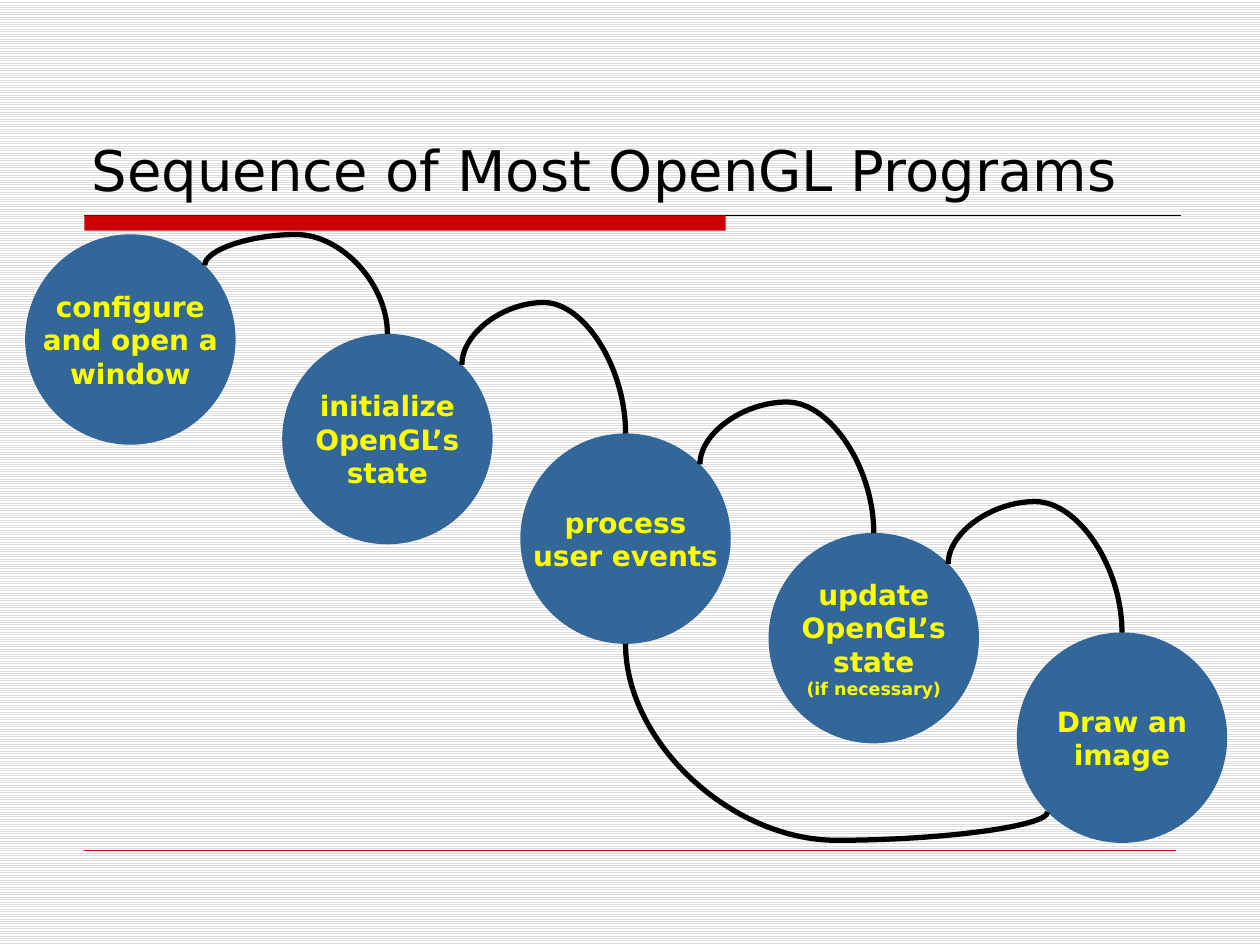
from dataclasses import dataclass
from math import sqrt

from lxml import etree
from pptx import Presentation
from pptx.dml.color import RGBColor
from pptx.enum.dml import MSO_PATTERN
from pptx.enum.shapes import MSO_CONNECTOR, MSO_SHAPE
from pptx.enum.text import MSO_ANCHOR, PP_ALIGN
from pptx.oxml.ns import qn
from pptx.util import Inches, Pt

STRIPES = MSO_PATTERN.LIGHT_HORIZONTAL
STRAIGHT, CURVE = MSO_CONNECTOR.STRAIGHT, MSO_CONNECTOR.CURVE
RECTANGLE, OVAL = MSO_SHAPE.RECTANGLE, MSO_SHAPE.OVAL
MIDDLE, BOTTOM = MSO_ANCHOR.MIDDLE, MSO_ANCHOR.BOTTOM
CENTER = PP_ALIGN.CENTER

BLACK = RGBColor(0x00, 0x00, 0x00)
WHITE = RGBColor(0xFF, 0xFF, 0xFF)
GRAY = RGBColor(0xDD, 0xDD, 0xDD)
RED = RGBColor(0xCC, 0x00, 0x00)
BLUE = RGBColor(0x33, 0x66, 0x99)
YELLOW = RGBColor(0xFF, 0xFF, 0x00)

FONT = "DejaVu Sans"
DIAMETER = 1.67
RADIUS = DIAMETER / 2
DIAGONAL = RADIUS / sqrt(2)
FIRST_TOP = 1.86
STEP_DOWN = 0.79
ARC_RISE = 0.25


@dataclass(frozen=True)
class Point:
    x: float
    y: float


@dataclass(frozen=True)
class Stage:
    left: float
    top: float
    lines: tuple[str, ...]
    note: str = ""

    def at(self, dx: float, dy: float) -> Point:
        return Point(self.left + RADIUS + dx, self.top + RADIUS + dy)


@dataclass(frozen=True)
class Arc:
    start: Point
    end: Point
    turn_y: float


def style_line(connector, color: RGBColor, width: float) -> None:
    connector.line.color.rgb = color
    connector.line.width = Pt(width)
    etree.SubElement(connector._element.spPr, qn("a:effectLst"))


def draw_rule(slide, left: float, right: float, y: float, color: RGBColor, width: float) -> None:
    rule = slide.shapes.add_connector(
        STRAIGHT, Inches(left), Inches(y), Inches(right), Inches(y)
    )
    style_line(rule, color, width)


def draw_title(slide, text: str) -> None:
    title = slide.shapes.add_textbox(Inches(0.63), Inches(0.33), Inches(8.75), Inches(1.33))
    frame = title.text_frame
    frame.word_wrap = True
    frame.vertical_anchor = BOTTOM
    frame.text = text
    font = frame.paragraphs[0].font
    font.name, font.size, font.color.rgb = FONT, Pt(32), BLACK


def draw_bar(slide) -> None:
    bar = slide.shapes.add_shape(
        RECTANGLE, Inches(0.67), Inches(1.71), Inches(5.09), Inches(0.12)
    )
    bar.shadow.inherit = False
    bar.fill.solid()
    bar.fill.fore_color.rgb = RED
    bar.line.fill.background()


def draw_stage(slide, stage: Stage) -> None:
    circle = slide.shapes.add_shape(
        OVAL, Inches(stage.left), Inches(stage.top), Inches(DIAMETER), Inches(DIAMETER)
    )
    circle.shadow.inherit = False
    circle.fill.solid()
    circle.fill.fore_color.rgb = BLUE
    circle.line.fill.background()
    frame = circle.text_frame
    frame.word_wrap = False
    frame.vertical_anchor = MIDDLE
    frame.margin_left = frame.margin_right = frame.margin_top = frame.margin_bottom = 0
    sized_lines = [(line, 16) for line in stage.lines]
    if stage.note:
        sized_lines.append((stage.note, 10))
    for index, (line, size) in enumerate(sized_lines):
        paragraph = frame.add_paragraph() if index else frame.paragraphs[0]
        paragraph.text = line
        paragraph.alignment = CENTER
        font = paragraph.font
        font.name, font.size, font.bold = FONT, Pt(size), True
        font.color.rgb = YELLOW


def draw_arc(slide, arc: Arc) -> None:
    rise = arc.end.y - arc.start.y
    half_width = rise / 2
    half_height = (arc.end.x - arc.start.x) / 2
    middle = Point((arc.start.x + arc.end.x) / 2, (arc.start.y + arc.end.y) / 2)
    connector = slide.shapes.add_connector(
        CURVE,
        Inches(middle.x - half_width),
        Inches(middle.y + half_height),
        Inches(middle.x + half_width),
        Inches(middle.y - half_height),
    )
    connector.rotation = 90
    bend = round((arc.turn_y - arc.start.y) / rise * 100000)
    adjustments = connector._element.spPr.find(qn("a:prstGeom")).get_or_add_avLst()
    etree.SubElement(adjustments, qn("a:gd"), name="adj1", fmla=f"val {bend}")
    style_line(connector, BLACK, 3)


def main() -> None:
    presentation = Presentation()
    presentation.slide_width, presentation.slide_height = Inches(10), Inches(7.5)
    slide = presentation.slides.add_slide(presentation.slide_layouts[6])
    backdrop = slide.background.fill
    backdrop.patterned()
    backdrop.pattern = STRIPES
    backdrop.fore_color.rgb, backdrop.back_color.rgb = GRAY, WHITE

    draw_rule(slide, 0.67, 9.37, 1.71, BLACK, 0.75)
    draw_bar(slide)
    draw_rule(slide, 0.67, 9.33, 6.75, RED, 0.25)
    draw_title(slide, "Sequence of Most OpenGL Programs")

    labels = (
        (0.2, ("configure", "and open a", "window"), ""),
        (2.24, ("initialize", "OpenGL’s", "state"), ""),
        (4.13, ("process", "user events"), ""),
        (6.1, ("update", "OpenGL’s", "state"), "(if necessary)"),
        (8.07, ("Draw an", "image"), ""),
    )
    stages = [
        Stage(left, FIRST_TOP + STEP_DOWN * index, lines, note)
        for index, (left, lines, note) in enumerate(labels)
    ]
    for stage in stages:
        draw_stage(slide, stage)

    for index, (current, following) in enumerate(zip(stages, stages[1:])):
        turn_y = current.top - ARC_RISE if index else current.top
        draw_arc(slide, Arc(current.at(DIAGONAL, -DIAGONAL), following.at(0, -RADIUS), turn_y))
    events, drawing = stages[2], stages[4]
    draw_arc(slide, Arc(events.at(0, RADIUS), drawing.at(-DIAGONAL, DIAGONAL), 6.67))

    presentation.save("out.pptx")


if __name__ == "__main__":
    main()
